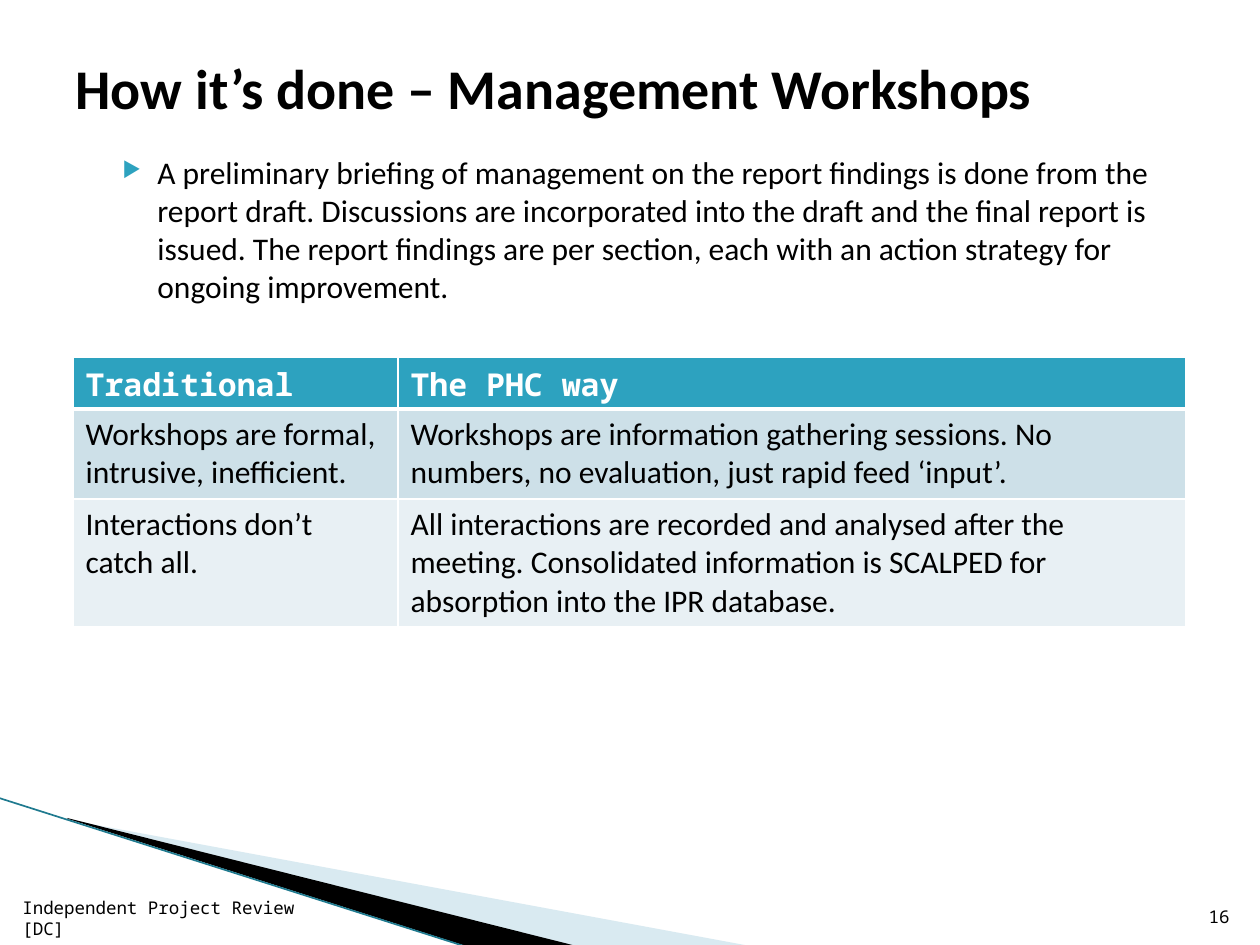
"""Build the Management Workshops slide with its comparison table."""

from typing import NamedTuple

from lxml.etree import SubElement
from pptx import Presentation
from pptx.dml.color import RGBColor
from pptx.enum.shapes import MSO_CONNECTOR
from pptx.enum.text import MSO_ANCHOR, PP_ALIGN
from pptx.oxml import parse_xml
from pptx.oxml.ns import qn
from pptx.util import Emu, Pt

EMU_PER_PX = 914400 / 126
NAMESPACE = 'xmlns:a="http://schemas.openxmlformats.org/drawingml/2006/main"'
SANS, MONO = "Calibri", "Noto Sans Mono"
BLACK, WHITE, TEAL = "000000", "FFFFFF", "2DA2BF"


class Box(NamedTuple):
    left: int
    top: int
    width: int
    height: int


class Wedge(NamedTuple):
    points: list[tuple[int, int]]
    color: str
    opacity: int


class TableRow(NamedTuple):
    texts: tuple[str, str]
    height: int
    fill: str
    font: str = SANS
    color: str = BLACK
    bold: bool = False
    top_border: int = 1
    bottom_border: int = 1


WEDGES = [
    Wedge([(69, 820), (750, 946), (575, 946), (69, 819)], "A0CBDC", 40),
    Wedge([(67, 818), (576, 946), (469, 947), (68, 819)], BLACK, 100),
]
ROWS = [
    TableRow(("Traditional", "The PHC way"), 52, TEAL, MONO, WHITE, True, bottom_border=3),
    TableRow(("Workshops are formal, intrusive, inefficient.",
              "Workshops are information gathering sessions. No numbers, "
              "no evaluation, just rapid feed ‘input’."), 90, "CDE0E8", top_border=3),
    TableRow(("Interactions don’t catch all.",
              "All interactions are recorded and analysed after the meeting. Consolidated "
              "information is SCALPED for absorption into the IPR database."), 128, "E8F0F4"),
]
COLUMN_WIDTHS = (325, 788)


def px(length: int) -> Emu:
    """Turn pixels into EMU."""
    return Emu(round(length * EMU_PER_PX))


def rgb(color: str) -> RGBColor:
    """Turn a hex string into a colour."""
    return RGBColor.from_string(color)


def place(box: Box) -> list[Emu]:
    """Turn a box into EMU lengths."""
    return [px(length) for length in box]


def write(frame, text: str, *, size=18, font=SANS, color=BLACK, bold=False,
          align=PP_ALIGN.LEFT, anchor=MSO_ANCHOR.TOP):
    """Fill a text frame with one formatted paragraph and return it."""
    frame.word_wrap = True
    frame.vertical_anchor = anchor
    paragraph = frame.paragraphs[0]
    paragraph.alignment = align
    run = paragraph.add_run()
    run.text = text
    run.font.size, run.font.name, run.font.bold = Pt(size), font, bold
    run.font.color.rgb = rgb(color)
    return paragraph


def add_text(slide, box: Box, text: str, **style):
    """Add a text box and return its paragraph."""
    return write(slide.shapes.add_textbox(*place(box)).text_frame, text, **style)


def add_bullet(paragraph, left: int, hanging: int) -> None:
    """Give a paragraph a hanging triangle bullet."""
    properties = paragraph._p.get_or_add_pPr()
    properties.set("marL", str(px(left)))
    properties.set("indent", str(-px(hanging)))
    color = SubElement(properties, qn("a:buClr"))
    SubElement(color, qn("a:srgbClr"), val=TEAL)
    SubElement(properties, qn("a:buSzPct"), val="68000")
    SubElement(properties, qn("a:buChar"), char="▶")


def add_wedge(slide, wedge: Wedge) -> None:
    """Draw one filled wedge."""
    builder = slide.shapes.build_freeform(*wedge.points[0], scale=EMU_PER_PX)
    builder.add_line_segments(wedge.points[1:], close=True)
    shape = builder.convert_to_shape()
    shape.shadow.inherit = False
    shape.line.fill.background()
    shape.fill.solid()
    shape.fill.fore_color.rgb = rgb(wedge.color)
    if wedge.opacity < 100:
        color = shape.fill._xPr.find(qn("a:solidFill"))[0]
        SubElement(color, qn("a:alpha"), val=str(wedge.opacity * 1000))


def add_edge(slide, start: tuple[int, int], end: tuple[int, int], color: str) -> None:
    """Draw the thin line along the wedges."""
    line = slide.shapes.add_connector(
        MSO_CONNECTOR.STRAIGHT, *(px(length) for length in start + end))
    line.line.color.rgb = rgb(color)
    line.line.width = Pt(0.95)
    SubElement(line._element.spPr, qn("a:effectLst"))


def set_borders(cell, top: int, bottom: int) -> None:
    """Draw white borders around a cell."""
    properties = cell._tc.get_or_add_tcPr()
    for index, (side, width) in enumerate(zip("LRTB", (1, 1, top, bottom))):
        properties.insert(index, parse_xml(
            f'<a:ln{side} {NAMESPACE} w="{Pt(width)}"><a:solidFill>'
            f'<a:srgbClr val="{WHITE}"/></a:solidFill></a:ln{side}>'))


def add_comparison(slide, left: int, top: int) -> None:
    """Add the comparison table."""
    box = Box(left, top, sum(COLUMN_WIDTHS), sum(row.height for row in ROWS))
    table = slide.shapes.add_table(len(ROWS), len(COLUMN_WIDTHS), *place(box)).table
    for column, width in zip(table.columns, COLUMN_WIDTHS):
        column.width = px(width)
    for table_row, row in zip(table.rows, ROWS):
        table_row.height = px(row.height)
        for cell, text in zip(table_row.cells, row.texts):
            cell.fill.solid()
            cell.fill.fore_color.rgb = rgb(row.fill)
            set_borders(cell, row.top_border, row.bottom_border)
            write(cell.text_frame, text, font=row.font, color=row.color, bold=row.bold)


def main() -> None:
    """Build and save the presentation."""
    presentation = Presentation()
    presentation.slide_width, presentation.slide_height = px(1260), px(945)
    slide = presentation.slides.add_slide(presentation.slide_layouts[5])

    for wedge in WEDGES:
        add_wedge(slide, wedge)
    add_edge(slide, (-1, 798), (467, 947), "1F7A8F")

    title = slide.shapes.title
    title.left, title.top, title.width, title.height = place(Box(63, 38, 1134, 98))
    write(title.text_frame, "How it’s done – Management Workshops",
          size=32, bold=True, anchor=MSO_ANCHOR.MIDDLE)

    briefing = add_text(
        slide, Box(95, 147, 1102, 220),
        "A preliminary briefing of management on the report findings is done from the report "
        "draft. Discussions are incorporated into the draft and the final report is issued. "
        "The report findings are per section, each with an action strategy for ongoing "
        "improvement.")
    add_bullet(briefing, 50, 35)

    add_comparison(slide, 73, 357)
    add_text(slide, Box(1192, 883, 50, 50), "16", size=10, font=MONO,
             align=PP_ALIGN.RIGHT, anchor=MSO_ANCHOR.BOTTOM)
    add_text(slide, Box(10, 895, 315, 50), "Independent Project Review [DC]",
             size=10, font=MONO, anchor=MSO_ANCHOR.BOTTOM)
    presentation.save("out.pptx")


if __name__ == "__main__":
    main()
